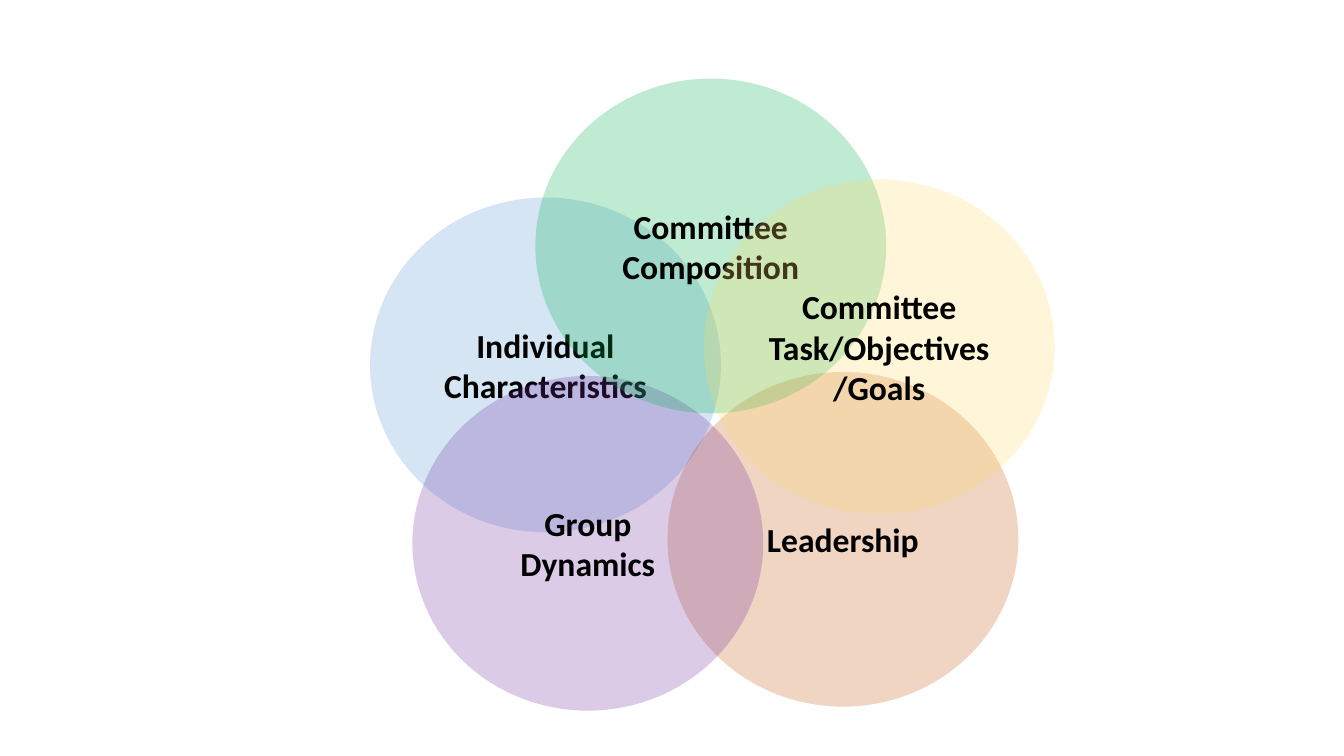
from dataclasses import dataclass

from lxml.etree import SubElement
from pptx import Presentation
from pptx.dml.color import RGBColor
from pptx.enum.shapes import MSO_SHAPE as Shape
from pptx.enum.text import MSO_ANCHOR as Anchor, PP_ALIGN as Align
from pptx.oxml.ns import qn
from pptx.util import Inches, Pt


@dataclass(frozen=True)
class Theme:
    font: str = "Calibri"
    label_size: int = 24
    text: str = "000000"
    blue: str = "5B9BD5"
    orange: str = "C55A11"
    purple: str = "7030A0"
    green: str = "00B050"
    yellow: str = "FFD966"
    opacity: int = 25


THEME = Theme()
CIRCLE_WIDTH, CIRCLE_HEIGHT = 3.48, 3.32

# Offsets from the diagram's top left corner, back to front
FACTORS = [
    (0, 1.18, THEME.blue, "Individual\nCharacteristics"),
    (2.95, 2.91, THEME.orange, "Leadership"),
    (0.42, 2.95, THEME.purple, "Group Dynamics"),
    (1.64, 0, THEME.green, "Committee Composition"),
    (3.31, 1, THEME.yellow, "Committee Task/Objectives/Goals"),
]


def write_text(frame, text, *, size, color, bold=False, align=Align.CENTER):
    """Fill the frame with one paragraph per line of text."""
    frame.word_wrap = True
    frame.vertical_anchor = Anchor.MIDDLE
    for index, line in enumerate(text.split("\n")):
        para = frame.add_paragraph() if index else frame.paragraphs[0]
        para.alignment = align
        span = para.add_run()
        span.text = line
        span.font.name = THEME.font
        span.font.size = Pt(size)
        span.font.bold = bold
        span.font.color.rgb = RGBColor.from_string(color)


def fill_translucent(shape, color, opacity):
    shape.fill.solid()
    shape.fill.fore_color.rgb = RGBColor.from_string(color)
    color_node = shape.fill._xPr.find(qn("a:solidFill"))[0]
    SubElement(color_node, qn("a:alpha"), val=str(opacity * 1000))


def add_circle(page, left, top, color, label):
    circle = page.shapes.add_shape(
        Shape.OVAL, Inches(left), Inches(top),
        Inches(CIRCLE_WIDTH), Inches(CIRCLE_HEIGHT))
    circle.shadow.inherit = False
    circle.line.fill.background()
    fill_translucent(circle, color, THEME.opacity)
    write_text(circle.text_frame, label, size=THEME.label_size,
               color=THEME.text, bold=True)


def add_venn_diagram(page, left, top):
    for offset_x, offset_y, color, label in FACTORS:
        add_circle(page, left + offset_x, top + offset_y, color, label)


def main():
    deck = Presentation()
    deck.slide_width, deck.slide_height = Inches(13.33), Inches(7.5)
    page = deck.slides.add_slide(deck.slide_layouts.get_by_name("Blank"))
    add_venn_diagram(page, left=3.67, top=0.78)
    deck.save("out.pptx")


if __name__ == "__main__":
    main()
